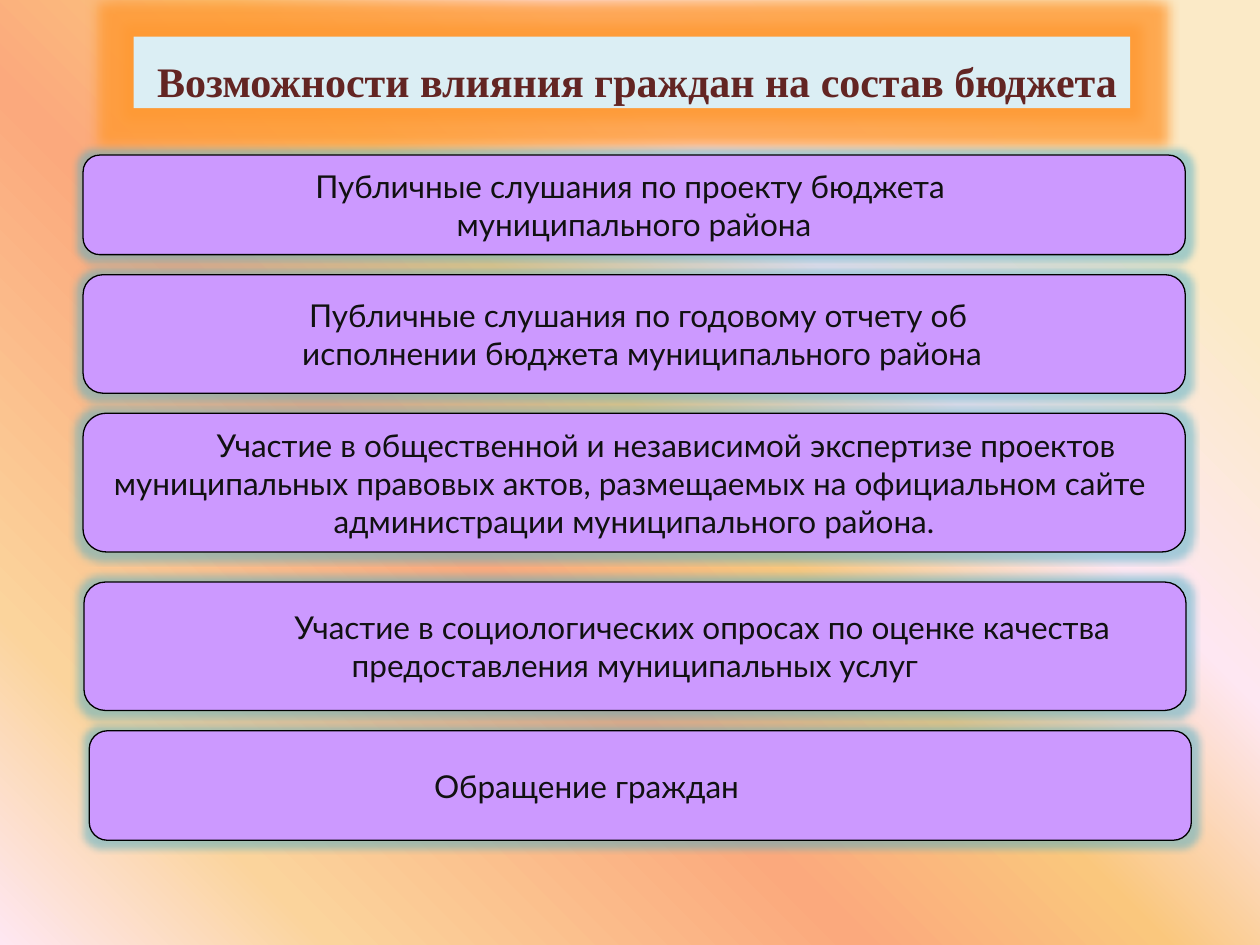
from dataclasses import dataclass

from lxml import etree
from pptx import Presentation
from pptx.dml.color import RGBColor
from pptx.enum import shapes, text
from pptx.oxml import ns
from pptx.util import Pt

COLORS = {
    "title_fill": "DBEEF4", "title_text": "632523", "title_glow": "FF9933",
    "box_fill": "CC99FF", "box_line": "000000", "box_text": "111111",
    "box_glow": "4BACC6",
}
BACKGROUND_STOPS = [(15, "FBEAC7"), (32, "FEE7F2"), (47, "FAC77D"),
                    (61, "FBA97D"), (85, "FBD49C"), (100, "FEE7F2")]


@dataclass
class Line:
    wording: str
    left: float = 0   # paragraph margins in points
    right: float = 0


@dataclass
class Option:
    left: float
    top: float
    height: float
    lines: list[Line]
    align: text.PP_ALIGN = text.PP_ALIGN.CENTER


BOX_WIDTH = 629.8
OPTIONS = [
    Option(47.5, 88.6, 56.9, [
        Line("Публичные слушания по проекту бюджета", right=4.6),
        Line("муниципального района")]),
    Option(47.5, 157, 67.7, [
        Line("Публичные слушания по годовому отчету об", left=4.6),
        Line("исполнении бюджета муниципального района", left=9.2)]),
    Option(47.5, 236.2, 79.2, [
        Line("Участие в общественной и независимой экспертизе проектов", left=36.6),
        Line("муниципальных правовых актов, размещаемых на официальном сайте", right=4.6),
        Line("администрации муниципального района.")]),
    Option(48, 332.6, 73.4, [
        Line("Участие в социологических опросах по оценке качества", left=77),
        Line("предоставления муниципальных услуг")]),
    Option(51, 417.6, 62.6, [Line("Обращение граждан", left=187)],
           text.PP_ALIGN.LEFT),
]


def rgb(name: str) -> RGBColor:
    return RGBColor.from_string(COLORS[name])


def add_color(parent, value: str):
    return etree.SubElement(parent, ns.qn("a:srgbClr"), val=value)


def add_glow(shape, color: str, radius: float, opacity: int) -> None:
    shape.shadow.inherit = False
    effects = shape.element.spPr.find(ns.qn("a:effectLst"))
    glow = etree.SubElement(effects, ns.qn("a:glow"), rad=str(int(Pt(radius))))
    etree.SubElement(add_color(glow, COLORS[color]), ns.qn("a:alpha"),
                     val=str(opacity * 1000))


def paint_background(slide) -> None:
    fill = slide.background.fill
    fill.gradient()
    fill.gradient_angle = 225
    stops = slide.element.find(".//" + ns.qn("a:gsLst"))
    for old in list(stops):
        stops.remove(old)
    for position, color in BACKGROUND_STOPS:
        add_color(etree.SubElement(stops, ns.qn("a:gs"), pos=str(position * 1000)),
                  color)


def format_font(paragraph, name: str, size: float, color: str, bold=False) -> None:
    for run in paragraph.runs:
        run.font.name = name
        run.font.size = Pt(size)
        run.font.bold = bold
        run.font.color.rgb = rgb(color)


def draw_title(slide, wording: str) -> None:
    title = slide.shapes.add_shape(shapes.MSO_SHAPE.RECTANGLE,
                                   Pt(76.3), Pt(20.9), Pt(569.5), Pt(41))
    title.fill.solid()
    title.fill.fore_color.rgb = rgb("title_fill")
    title.line.fill.background()
    add_glow(title, "title_glow", 14, 80)
    frame = title.text_frame
    frame.text = wording
    frame.word_wrap = True
    frame.vertical_anchor = text.MSO_ANCHOR.TOP
    frame.margin_left, frame.margin_right = Pt(12), Pt(6)
    frame.margin_top, frame.margin_bottom = Pt(11), Pt(0)
    frame.paragraphs[0].alignment = text.PP_ALIGN.CENTER
    format_font(frame.paragraphs[0], "Times New Roman", 24, "title_text", True)


def draw_option(slide, option: Option) -> None:
    box = slide.shapes.add_shape(
        shapes.MSO_SHAPE.FLOWCHART_ALTERNATE_PROCESS,
        Pt(option.left), Pt(option.top), Pt(BOX_WIDTH), Pt(option.height))
    box.fill.solid()
    box.fill.fore_color.rgb = rgb("box_fill")
    box.line.color.rgb = rgb("box_line")
    box.line.width = Pt(0.75)
    add_glow(box, "box_glow", 8, 50)
    frame = box.text_frame
    frame.text = "\n".join(line.wording for line in option.lines)
    frame.word_wrap = True
    frame.vertical_anchor = text.MSO_ANCHOR.MIDDLE
    for paragraph, line in zip(frame.paragraphs, option.lines):
        paragraph.alignment = option.align
        margins = paragraph._p.get_or_add_pPr()
        margins.set("marL", str(int(Pt(line.left))))
        margins.set("marR", str(int(Pt(line.right))))
        format_font(paragraph, "Lato", 18, "box_text")


def main() -> None:
    deck = Presentation()
    deck.slide_width, deck.slide_height = Pt(720), Pt(540)
    slide = deck.slides.add_slide(deck.slide_layouts[6])
    paint_background(slide)
    # Heading
    draw_title(slide, "Возможности влияния граждан на состав бюджета")
    # Ways to take part
    for option in OPTIONS:
        draw_option(slide, option)
    deck.save("out.pptx")


if __name__ == "__main__":
    main()
